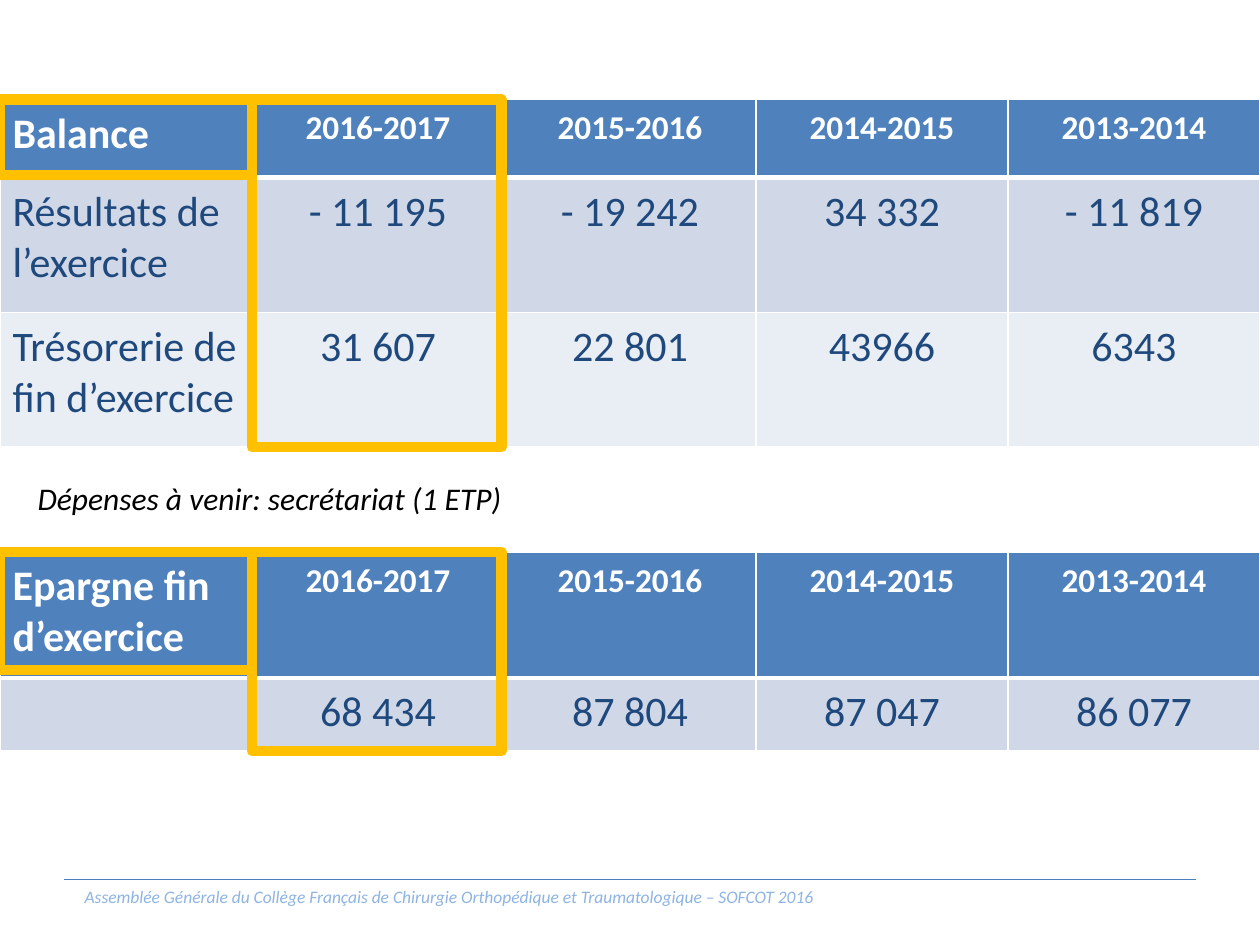
"""Build the slide showing the yearly balance and savings tables."""
from lxml import etree
from pptx import Presentation
from pptx.dml.color import RGBColor
from pptx.enum.shapes import MSO_CONNECTOR, MSO_SHAPE
from pptx.enum.text import MSO_AUTO_SIZE, PP_ALIGN
from pptx.oxml.ns import qn
from pptx.util import Inches, Pt

STRAIGHT, RECTANGLE = MSO_CONNECTOR.STRAIGHT, MSO_SHAPE.RECTANGLE
LEFT, CENTER = PP_ALIGN.LEFT, PP_ALIGN.CENTER
FIT_SHAPE = MSO_AUTO_SIZE.SHAPE_TO_FIT_TEXT

WHITE = RGBColor(0xFF, 0xFF, 0xFF)
BLACK = RGBColor(0x00, 0x00, 0x00)
HEADER_BLUE = RGBColor(0x4F, 0x81, 0xBD)
NAVY = RGBColor(0x1F, 0x49, 0x7D)
BANDS = (RGBColor(0xD0, 0xD8, 0xE8), RGBColor(0xE9, 0xED, 0xF4))
AMBER = RGBColor(0xFF, 0xC0, 0x00)
RULE_BLUE = RGBColor(0x4B, 0x7E, 0xBC)
FOOTER_BLUE = RGBColor(0x8E, 0xB4, 0xE3)

WIDTH, HEIGHT = Inches(10), Inches(7.5)
COLUMN, ROW = WIDTH / 5, HEIGHT / 75

TITLE = {"size": Pt(24), "bold": True}
YEAR = {"size": Pt(19), "bold": True}
FIGURE = {"size": Pt(24), "bold": False}
REMARK = {"size": Pt(18), "italic": True}
FOOTER = {"size": Pt(10), "italic": True}

YEARS = ["2016-2017", "2015-2016", "2014-2015", "2013-2014"]
BALANCE = [
    ["Balance", *YEARS],
    ["Résultats de l’exercice", "- 11 195", "- 19 242", "34 332", "- 11 819"],
    ["Trésorerie de fin d’exercice", "31 607", "22 801", "43966", "6343"],
]
SAVINGS = [
    ["Epargne fin d’exercice", *YEARS],
    ["", "68 434", "87 804", "87 047", "86 077"],
]


def grid(left, top, width, height):
    """Turn columns and rows of the grid into slide lengths."""
    return (round(left * COLUMN), round(top * ROW),
            round(width * COLUMN), round(height * ROW))


def write(frame, text, look, color, align=LEFT):
    """Put one formatted paragraph into a text frame."""
    paragraph = frame.paragraphs[0]
    paragraph.text, paragraph.alignment = text, align
    for key, value in {"name": "Calibri", **look}.items():
        setattr(paragraph.font, key, value)
    paragraph.font.color.rgb = color


def draw_borders(cell, top, bottom):
    """Give a cell white borders with the given top and bottom widths."""
    properties = cell._tc.get_or_add_tcPr()
    widths = {"a:lnL": 1, "a:lnR": 1, "a:lnT": top, "a:lnB": bottom}
    for side, width in widths.items():
        border = etree.SubElement(properties, qn(side), w=str(Pt(width)))
        fill = etree.SubElement(border, qn("a:solidFill"))
        etree.SubElement(fill, qn("a:srgbClr"), val=str(WHITE))


def add_year_table(slide, box, rows, row_heights):
    """Place a table with one column of labels and one column per year."""
    table = slide.shapes.add_table(len(rows), len(rows[0]), *grid(*box)).table
    for r, (texts, height) in enumerate(zip(rows, row_heights)):
        table.rows[r].height = round(height * ROW)
        for c, text in enumerate(texts):
            cell = table.cell(r, c)
            cell.margin_top = cell.margin_bottom = Inches(0.07)
            draw_borders(cell, 3 if r == 1 else 1, 3 if r == 0 else 1)
            cell.fill.solid()
            cell.fill.fore_color.rgb = BANDS[(r - 1) % 2] if r else HEADER_BLUE
            look = FIGURE if r else YEAR if c else TITLE
            write(cell.text_frame, text, look, NAVY if r else WHITE,
                  CENTER if c else LEFT)


def add_highlights(slide, box, label_height):
    """Frame the title cell and the latest year of a table."""
    left, top, width, height = box
    share = width / 5
    for frame_box in ((left, top, share, label_height),
                      (left + share, top, share * 0.99, height)):
        frame = slide.shapes.add_shape(RECTANGLE, *grid(*frame_box))
        frame.shadow.inherit = False
        frame.fill.background()
        frame.line.color.rgb = AMBER
        frame.line.width = Pt(6)


def add_remark(slide, box):
    """Place the remark on coming expenses."""
    remark = slide.shapes.add_textbox(*grid(*box)).text_frame
    remark.word_wrap, remark.auto_size = False, FIT_SHAPE
    write(remark, "Dépenses à venir: secrétariat (1 ETP)", REMARK, BLACK)


def add_footer(slide, box):
    """Place the footer rule and the name of the meeting below it."""
    left, top, width, height = grid(*box)
    rule = slide.shapes.add_connector(STRAIGHT, left, top, left + width, top)
    rule.line.color.rgb, rule.line.width = RULE_BLUE, Pt(0.75)
    etree.SubElement(rule._element.spPr, qn("a:effectLst"))
    meeting = slide.shapes.add_textbox(
        left, top, round(width * 0.68), height).text_frame
    meeting.word_wrap, meeting.auto_size = True, FIT_SHAPE
    write(meeting, "Assemblée Générale du Collège Français de Chirurgie "
          "Orthopédique et Traumatologique – SOFCOT 2016",
          FOOTER, FOOTER_BLUE, CENTER)


def main():
    """Build and save the slide."""
    deck = Presentation()
    deck.slide_width, deck.slide_height = WIDTH, HEIGHT
    slide = deck.slides.add_slide(deck.slide_layouts[6])
    balance_box, savings_box = (0, 7.9, 5, 27.6), (0, 43.8, 5, 15.8)
    add_footer(slide, (0.255, 69.8, 4.49, 2.7))
    add_year_table(slide, balance_box, BALANCE, (6.2, 10.7, 10.7))
    add_year_table(slide, savings_box, SAVINGS, (10, 5.8))
    add_highlights(slide, balance_box, 6)
    add_highlights(slide, savings_box, 9.4)
    add_remark(slide, (0.1, 37.5, 1.97, 4))
    deck.save("out.pptx")


if __name__ == "__main__":
    main()
